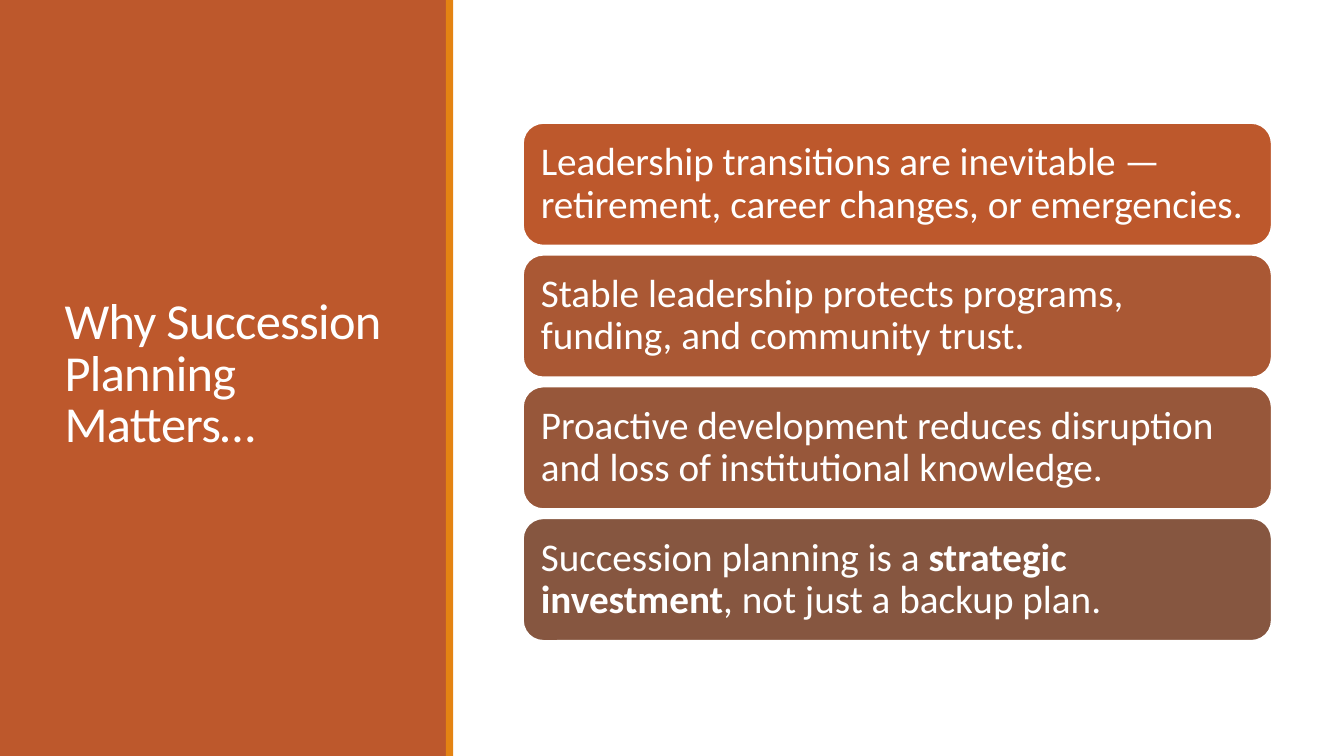
from dataclasses import dataclass

from pptx import Presentation
from pptx import util as u
from pptx.dml import color
from pptx.enum import shapes, text
from pptx.shapes.autoshape import Shape
from pptx.slide import Slide
from pptx.text.text import TextFrame


@dataclass(frozen=True)
class Theme:
    font: str = "Calibri"
    white: str = "FFFFFF"
    rust: str = "BD582C"
    orange: str = "E48312"
    title_size: float = 36
    card_size: float = 28
    card_line: float = 1.25


@dataclass(frozen=True)
class Span:
    words: str
    bold: bool = False


@dataclass(frozen=True)
class Card:
    fill: str
    spans: tuple[Span, ...]


THEME = Theme()
PAGE_WIDTH, PAGE_HEIGHT = 33.87, 19.05
PANEL_WIDTH, STRIPE_WIDTH = 11.24, 0.18
CARD_LEFT, CARD_TOP = 13.18, 3.1
CARD_WIDTH, CARD_HEIGHT, CARD_PITCH = 18.87, 3.09, 3.32

CARDS = (
    Card(THEME.rust, (
        Span("Leadership transitions are inevitable — retirement, career changes, or emergencies."),
    )),
    Card("AA5834", (
        Span("Stable leadership protects programs, funding, and community trust."),
    )),
    Card("97573A", (
        Span("Proactive development reduces disruption and loss of institutional knowledge."),
    )),
    Card("865640", (
        Span("Succession planning is a "),
        Span("strategic investment", bold=True),
        Span(", not just a backup plan."),
    )),
)


def add_block(page: Slide, kind: shapes.MSO_SHAPE, left: float, top: float,
              width: float, height: float, fill: str) -> Shape:
    block = page.shapes.add_shape(kind, u.Cm(left), u.Cm(top), u.Cm(width), u.Cm(height))
    block.shadow.inherit = False
    block.fill.solid()
    block.fill.fore_color.rgb = color.RGBColor.from_string(fill)
    block.line.fill.background()
    return block


def write_text(frame: TextFrame, spans: tuple[Span, ...], *, size: float,
               line_spacing: float, inset: float, tracking: float = 0) -> None:
    frame.word_wrap = True
    frame.vertical_anchor = text.MSO_ANCHOR.MIDDLE
    frame.margin_left = frame.margin_right = u.Cm(inset)
    frame.margin_top = frame.margin_bottom = u.Cm(inset)
    para = frame.paragraphs[0]
    para.alignment = text.PP_ALIGN.LEFT
    para.line_spacing = line_spacing
    for span in spans:
        run = para.add_run()
        run.text = span.words
        run.font.name = THEME.font
        run.font.size = u.Pt(size)
        run.font.bold = span.bold
        run.font.color.rgb = color.RGBColor.from_string(THEME.white)
        if tracking:
            run.font._element.set("spc", str(round(tracking * 100)))


def add_title_panel(page: Slide) -> None:
    rectangle = shapes.MSO_SHAPE.RECTANGLE
    add_block(page, rectangle, 0, 0, PANEL_WIDTH, PAGE_HEIGHT, THEME.rust)
    add_block(page, rectangle, PANEL_WIDTH, 0, STRIPE_WIDTH, PAGE_HEIGHT, THEME.orange)
    box = page.shapes.add_textbox(u.Cm(1.38), u.Cm(1.45), u.Cm(8.56), u.Cm(16.03))
    write_text(box.text_frame, (Span("Why Succession Planning Matters…"),),
               size=THEME.title_size, line_spacing=0.85, inset=0.25, tracking=-0.5)


def add_card(page: Slide, card: Card, top: float) -> None:
    block = add_block(page, shapes.MSO_SHAPE.ROUNDED_RECTANGLE, CARD_LEFT, top,
                      CARD_WIDTH, CARD_HEIGHT, card.fill)
    block.line.color.rgb = color.RGBColor.from_string(THEME.white)
    block.line.width = u.Pt(THEME.card_line)
    write_text(block.text_frame, card.spans, size=THEME.card_size,
               line_spacing=0.9, inset=0.3)


def main() -> None:
    deck = Presentation()
    deck.slide_width = u.Cm(PAGE_WIDTH)
    deck.slide_height = u.Cm(PAGE_HEIGHT)
    page = deck.slides.add_slide(deck.slide_layouts[6])
    add_title_panel(page)
    for index, card in enumerate(CARDS):
        add_card(page, card, CARD_TOP + index * CARD_PITCH)
    deck.save("out.pptx")


if __name__ == "__main__":
    main()
